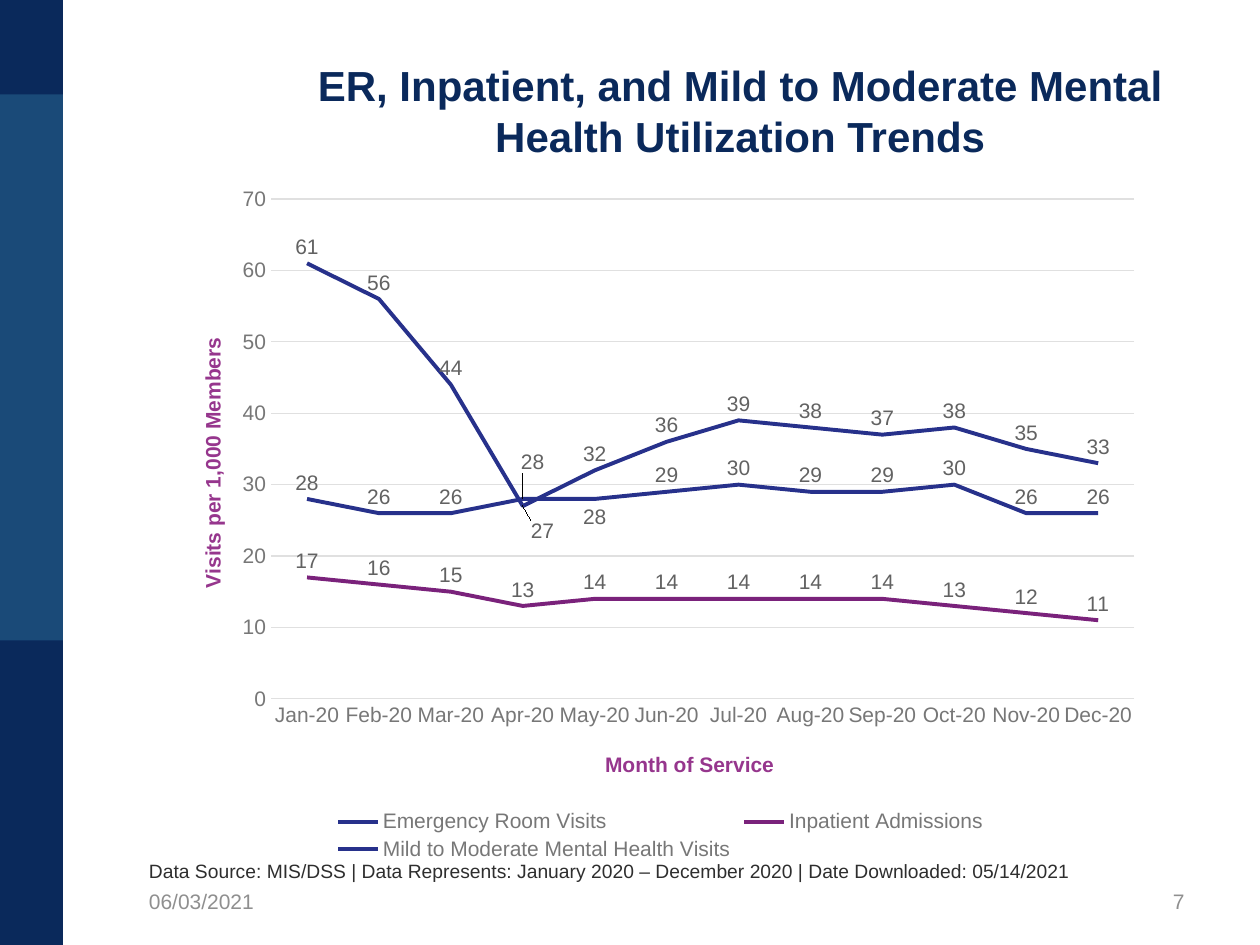
import pptx
import pptx.chart.data
import pptx.dml.color
import pptx.enum.chart
import pptx.enum.shapes
import pptx.enum.text
import pptx.oxml
import pptx.oxml.ns
import pptx.util

Pt = pptx.util.Pt
RGB = pptx.dml.color.RGBColor
qn = pptx.oxml.ns.qn
Align = pptx.enum.text.PP_ALIGN
Anchor = pptx.enum.text.MSO_ANCHOR
Enum = pptx.enum.chart

NAVY = RGB(0x0A, 0x29, 0x5B)
BLUE = RGB(0x1A, 0x4A, 0x78)
INDIGO = RGB(0x27, 0x31, 0x8B)
PLUM = RGB(0x7A, 0x22, 0x7B)
PINK = RGB(0x96, 0x36, 0x8D)
INK = RGB(0x2E, 0x2E, 0x2E)
LABEL = RGB(0x62, 0x62, 0x62)
GRAY = RGB(0x77, 0x77, 0x77)
PALE = RGB(0x8F, 0x8F, 0x8F)
GRID = RGB(0xE0, 0xE0, 0xE0)

MONTHS = [f"{name}-20" for name in
          "Jan Feb Mar Apr May Jun Jul Aug Sep Oct Nov Dec".split()]
# name, colour, values, label shifts by month index
LINES = [
    ("Emergency Room Visits", INDIGO,
     (61, 56, 44, 27, 32, 36, 39, 38, 37, 38, 35, 33), {3: (0.02, 0.06)}),
    ("Inpatient Admissions", PLUM,
     (17, 16, 15, 13, 14, 14, 14, 14, 14, 13, 12, 11), {}),
    ("Mild to Moderate Mental Health Visits", INDIGO,
     (28, 26, 26, 28, 28, 29, 30, 29, 29, 30, 26, 26),
     {3: (0.01, -0.03), 4: (0, 0.05)}),
]


def set_font(font, size=12, color=GRAY, bold=False):
    font.name = "Arial"
    font.size = Pt(size)
    font.bold = bold
    font.color.rgb = color


def write(frame, text, align=Align.LEFT, anchor=Anchor.MIDDLE, **style):
    frame.word_wrap = True
    frame.vertical_anchor = anchor
    para = frame.paragraphs[0]
    para.alignment = align
    run = para.add_run()
    run.text = text
    set_font(run.font, **style)


def place(node, index, edge=False, **parts):
    """Give a chart element a manual layout, as fractions of the chart."""
    for old in node.findall(qn("c:layout")):
        node.remove(old)
    tags = {"layoutTarget": "inner"} if edge else {}
    if edge:
        tags.update(xMode="edge", yMode="edge")
    tags.update(parts)
    body = "".join(f'<c:{tag} val="{val}"/>' for tag, val in tags.items())
    if node.tag == qn("c:title"):
        body = body.replace('<c:layoutTarget val="inner"/>', "")
    node.insert(index, pptx.oxml.parse_xml(
        f'<c:layout {pptx.oxml.ns.nsdecls("c")}>'
        f"<c:manualLayout>{body}</c:manualLayout></c:layout>"))


class Deck:
    def __init__(self):
        self.prs = pptx.Presentation()
        self.prs.slide_width, self.prs.slide_height = Pt(720), Pt(540)
        self.slide = self.prs.slides.add_slide(self.prs.slide_layouts[5])

    def band(self, top, height, color):
        box = self.slide.shapes.add_shape(
            pptx.enum.shapes.MSO_SHAPE.RECTANGLE, 0, Pt(top), Pt(36), Pt(height))
        box.shadow.inherit = False
        box.fill.solid()
        box.fill.fore_color.rgb = color
        box.line.fill.background()

    def title(self, text, left, top, width, height):
        box = self.slide.shapes.title
        box.left, box.top = Pt(left), Pt(top)
        box.width, box.height = Pt(width), Pt(height)
        write(box.text_frame, text, Align.CENTER, size=24, color=NAVY, bold=True)

    def text(self, text, left, top, width, height, **style):
        box = self.slide.shapes.add_textbox(
            Pt(left), Pt(top), Pt(width), Pt(height))
        write(box.text_frame, text, **style)

    def axis(self, axis, name, x, y, turn=0):
        axis.major_tick_mark = axis.minor_tick_mark = Enum.XL_TICK_MARK.NONE
        set_font(axis.tick_labels.font)
        title = axis.axis_title
        write(title.text_frame, name, Align.CENTER, color=PINK, bold=True)
        node = title.text_frame._txBody.getparent().getparent()
        body = node.find(".//" + qn("a:bodyPr"))
        body.set("rot", str(turn * 60000))
        body.set("vert", "horz")
        place(node, 1, edge=True, x=x, y=y)

    def series(self, line, color, shifts):
        line.smooth = False
        line.format.line.color.rgb = color
        line.format.line.width = Pt(2.25)
        line.marker.style = Enum.XL_MARKER_STYLE.NONE
        labels = line.data_labels
        labels.show_value = True
        labels.position = Enum.XL_LABEL_POSITION.ABOVE
        labels.number_format = "#,##0"
        labels.number_format_is_linked = False
        set_font(labels.font, color=LABEL)
        for index, (x, y) in shifts.items():
            label = line.points[index].data_label
            set_font(label.font, color=LABEL)
            label.position = Enum.XL_LABEL_POSITION.ABOVE
            for node in line._element.iter(qn("c:dLbl")):
                if node.find(qn("c:idx")).get("val") == str(index):
                    place(node, 1, x=x, y=y)

    def chart(self, left, top, width, height):
        data = pptx.chart.data.CategoryChartData(number_format="#,##0")
        data.categories = MONTHS
        for name, _, values, _ in LINES:
            data.add_series(name, values)
        chart = self.slide.shapes.add_chart(
            Enum.XL_CHART_TYPE.LINE, Pt(left), Pt(top), Pt(width), Pt(height),
            data).chart
        set_font(chart.font, size=10, color=INK)
        chart.has_title = False
        chart.has_legend = True
        chart.legend.position = Enum.XL_LEGEND_POSITION.BOTTOM
        chart.legend.include_in_layout = False
        set_font(chart.legend.font)
        plot = chart.plots[0]
        plot.vary_by_categories = False
        for line, (_, color, _, shifts) in zip(plot.series, LINES):
            self.series(line, color, shifts)

        months, visits = chart.category_axis, chart.value_axis
        self.axis(months, "Month of Service", 0.44, 0.83)
        self.axis(visits, "Visits per 1,000 Members", 0.03, 0.23, turn=-90)
        visits.minimum_scale, visits.maximum_scale = 0, 70
        visits.major_unit = 10
        visits.tick_labels.number_format = "#,##0"
        visits.tick_labels.number_format_is_linked = False
        visits.format.line.fill.background()
        for rule in (months.format.line, visits.major_gridlines.format.line):
            rule.color.rgb = GRID
            rule.width = Pt(0.75)
        area = chart._chartSpace.find(".//" + qn("c:plotArea"))
        place(area, 0, edge=True, x=0.106, y=0.035, w=0.873, h=0.724)


def main():
    deck = Deck()
    deck.band(0, 540, BLUE)
    deck.band(0, 54, NAVY)
    deck.band(366, 174, NAVY)
    deck.title("ER, Inpatient, and Mild to Moderate Mental Health "
               "Utilization Trends", 144, 18, 558, 90)
    deck.chart(95, 100, 565, 394.5)
    deck.text("Data Source: MIS/DSS | Data Represents: January 2020 – December "
              "2020 | Date Downloaded: 05/14/2021", 78, 487.5, 600, 21,
              anchor=Anchor.TOP, size=11, color=INK)
    deck.text("06/03/2021", 78, 500.5, 168, 29, color=PALE)
    deck.text("7", 516, 500.5, 168, 29, align=Align.RIGHT, color=PALE)
    deck.prs.save("out.pptx")


if __name__ == "__main__":
    main()
